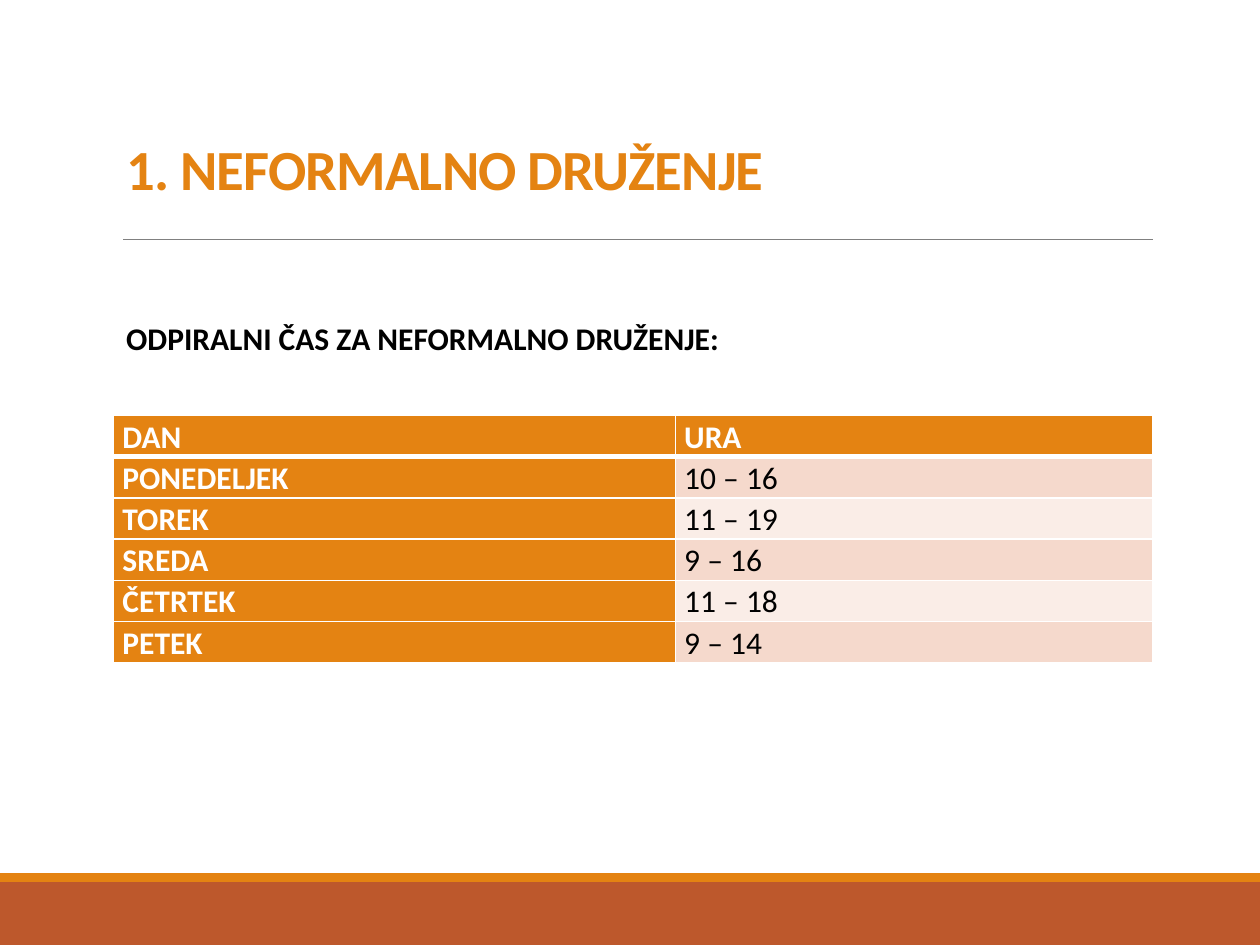
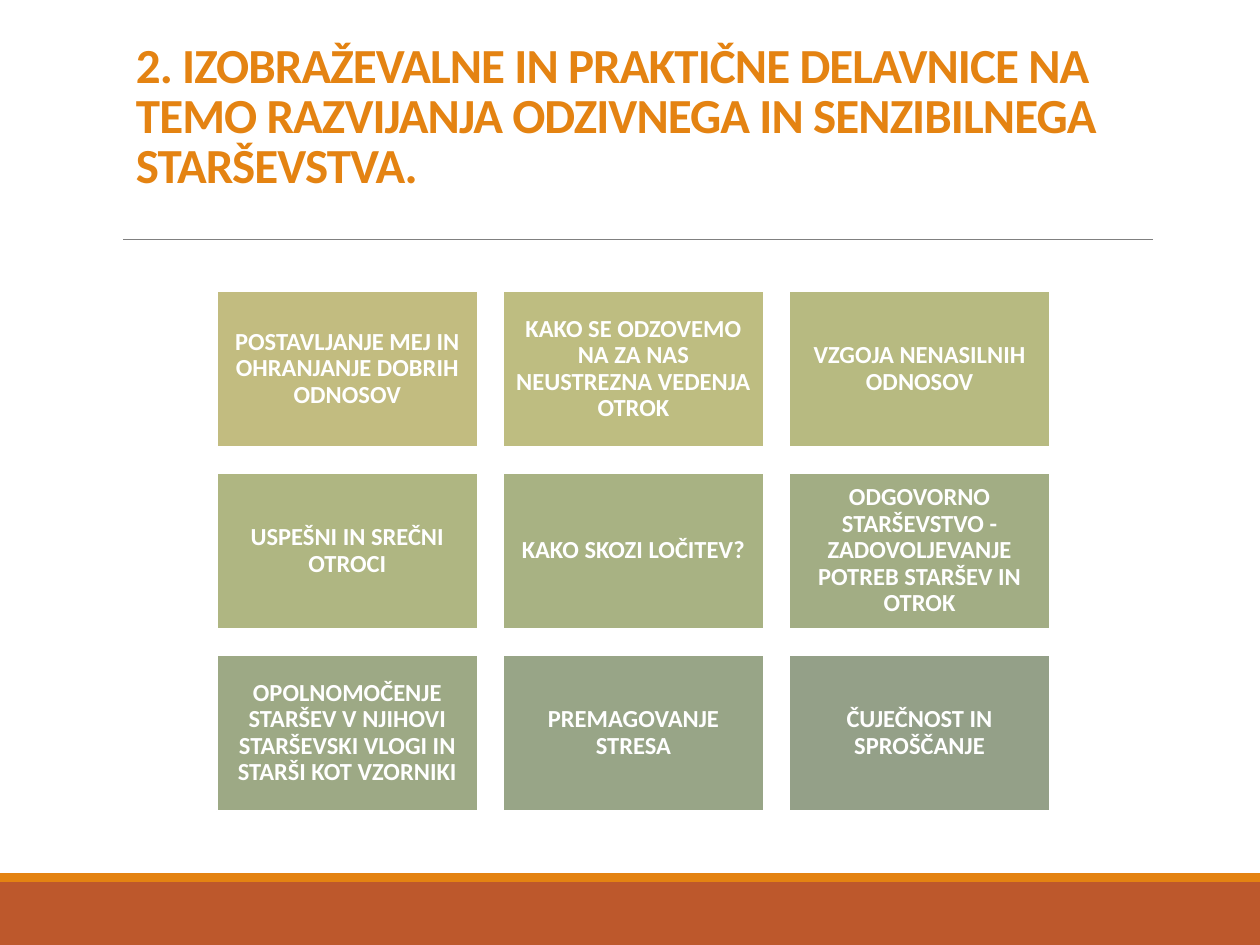
"""Build two slides on the opening hours and the workshops for parents."""
import pptx
import pptx.dml.color
import pptx.enum.shapes
import pptx.enum.text
import pptx.oxml
import pptx.oxml.ns
import pptx.util

Pt = pptx.util.Pt
ALIGN = pptx.enum.text.PP_ALIGN
ANCHOR = pptx.enum.text.MSO_ANCHOR
RECTANGLE = pptx.enum.shapes.MSO_SHAPE.RECTANGLE
COLORS = {
    "orange": "E48312",
    "rust": "BD582C",
    "rule": "808080",
    "white": "FFFFFF",
    "black": "000000",
    "band_dark": "F5D9CC",
    "band_light": "FAEDE7",
}
HOURS = [
    ("DAN", "URA"),
    ("PONEDELJEK", "10 – 16"),
    ("TOREK", "11 – 19"),
    ("SREDA", "9 – 16"),
    ("ČETRTEK", "11 – 18"),
    ("PETEK", "9 – 14"),
]
WORKSHOPS = [
    ("POSTAVLJANJE MEJ IN OHRANJANJE DOBRIH ODNOSOV", "C2BC80"),
    ("KAKO SE ODZOVEMO NA ZA NAS NEUSTREZNA VEDENJA OTROK", "BEBD81"),
    ("VZGOJA NENASILNIH ODNOSOV", "B7BA81"),
    ("USPEŠNI IN SREČNI OTROCI", "AFB682"),
    ("KAKO SKOZI LOČITEV?", "A8B283"),
    ("ODGOVORNO STARŠEVSTVO - ZADOVOLJEVANJE POTREB STARŠEV IN OTROK", "A2AD84"),
    ("OPOLNOMOČENJE STARŠEV V NJIHOVI STARŠEVSKI VLOGI IN STARŠI KOT VZORNIKI", "9DA985"),
    ("PREMAGOVANJE STRESA", "98A587"),
    ("ČUJEČNOST IN SPROŠČANJE", "94A088"),
]


def rgb(color):
    return pptx.dml.color.RGBColor.from_string(COLORS.get(color, color))


def write(frame, text, size=18, color="black", bold=True, align=ALIGN.LEFT,
          line_spacing=1.0, tracking=0):
    paragraph = frame.paragraphs[0]
    paragraph.alignment = align
    paragraph.line_spacing = line_spacing
    run = paragraph.add_run()
    run.text = text
    run.font.name = "Calibri"
    run.font.size = Pt(size)
    run.font.bold = bold
    run.font.color.rgb = rgb(color)
    if tracking:
        run.font._element.set("spc", str(int(tracking * 100)))


class Deck:
    def __init__(self):
        self.presentation = pptx.Presentation()
        self.presentation.slide_width = Pt(720)
        self.presentation.slide_height = Pt(540)
        self.slide = None

    def start_slide(self, title, left, top, size, bottom_inset=3.6):
        self.slide = self.presentation.slides.add_slide(self.presentation.slide_layouts[5])
        self.rectangle(0, 504, 720, 36, "rust")
        self.rectangle(0, 499, 720, 5, "orange")
        self.rule(70.5, 137, 659)
        heading = self.slide.shapes.title
        heading.left, heading.top = Pt(left), Pt(top)
        heading.width, heading.height = Pt(594), Pt(114.5)
        frame = heading.text_frame
        frame.auto_size = pptx.enum.text.MSO_AUTO_SIZE.NONE
        frame.vertical_anchor = ANCHOR.BOTTOM
        frame.margin_bottom = Pt(bottom_inset)
        write(frame, title, size=size, color="orange", line_spacing=0.85, tracking=-0.5)

    def rectangle(self, left, top, width, height, fill, outline=None):
        box = self.slide.shapes.add_shape(RECTANGLE, Pt(left), Pt(top), Pt(width), Pt(height))
        box.shadow.inherit = False
        box.fill.solid()
        box.fill.fore_color.rgb = rgb(fill)
        if outline:
            box.line.color.rgb = rgb(outline)
            box.line.width = Pt(1.25)
        else:
            box.line.fill.background()
        return box

    def rule(self, left, y, right):
        line = self.slide.shapes.add_connector(
            pptx.enum.shapes.MSO_CONNECTOR.STRAIGHT, Pt(left), Pt(y), Pt(right), Pt(y))
        line.line.color.rgb = rgb("rule")
        line.line.width = Pt(0.5)
        line._element.spPr.append(pptx.oxml.parse_xml(
            f"<a:effectLst {pptx.oxml.ns.nsdecls('a')}/>"))

    def label(self, text, left, top, width, height):
        box = self.slide.shapes.add_textbox(Pt(left), Pt(top), Pt(width), Pt(height))
        box.text_frame.word_wrap = True
        write(box.text_frame, text)

    def tile(self, text, left, top, width, height, fill):
        frame = self.rectangle(left, top, width, height, fill, "white").text_frame
        frame.word_wrap = True
        frame.vertical_anchor = ANCHOR.MIDDLE
        frame.margin_left = frame.margin_right = Pt(4.2)
        frame.margin_top = frame.margin_bottom = Pt(4.2)
        write(frame, text, size=14, color="white", align=ALIGN.CENTER, line_spacing=0.9)

    def table(self, rows, left, top, column_widths, row_height):
        grid = self.slide.shapes.add_table(
            len(rows), len(column_widths), Pt(left), Pt(top),
            Pt(sum(column_widths)), Pt(row_height * len(rows))).table
        grid.horz_banding = False
        for column, width in zip(grid.columns, column_widths):
            column.width = Pt(width)
        for r, row in enumerate(rows):
            grid.rows[r].height = Pt(row_height)
            for c, text in enumerate(row):
                is_header = r == 0 or c == 0
                band = "band_dark" if r % 2 else "band_light"
                cell = grid.cell(r, c)
                cell.margin_left = cell.margin_right = Pt(5)
                cell.margin_top = cell.margin_bottom = 0
                cell.fill.solid()
                cell.fill.fore_color.rgb = rgb("orange" if is_header else band)
                write(cell.text_frame, text, color="white" if is_header else "black",
                      bold=is_header, line_spacing=1.07)
                self.cell_borders(cell, top=3 if r == 1 else 1, bottom=3 if r == 0 else 1)

    def cell_borders(self, cell, top, bottom):
        properties = cell._tc.get_or_add_tcPr()
        sides = {"lnL": 1, "lnR": 1, "lnT": top, "lnB": bottom}
        for position, (side, width) in enumerate(sides.items()):
            properties.insert(position, pptx.oxml.parse_xml(
                f'<a:{side} {pptx.oxml.ns.nsdecls("a")} w="{Pt(width)}"><a:solidFill>'
                f'<a:srgbClr val="{COLORS["white"]}"/></a:solidFill></a:{side}>'))


def main():
    deck = Deck()
    deck.start_slide("1. NEFORMALNO DRUŽENJE", 65, 22.5, 32.4, bottom_inset=21.5)
    deck.table(HOURS, 65, 237.5, (321, 273), 23.4)
    deck.label("ODPIRALNI ČAS ZA NEFORMALNO DRUŽENJE:", 65, 178.5, 461, 29)

    deck.start_slide(
        "2. IZOBRAŽEVALNE IN PRAKTIČNE DELAVNICE NA TEMO RAZVIJANJA "
        "ODZIVNEGA IN SENZIBILNEGA STARŠEVSTVA.", 70.5, 0, 28)
    width, height, gap = 149, 89.5, 14.5
    for index, (workshop, fill) in enumerate(WORKSHOPS):
        row, column = divmod(index, 3)
        deck.tile(workshop, 124 + column * (width + gap), 166 + row * (height + gap),
                  width, height, fill)
    deck.presentation.save("out.pptx")


if __name__ == "__main__":
    main()
